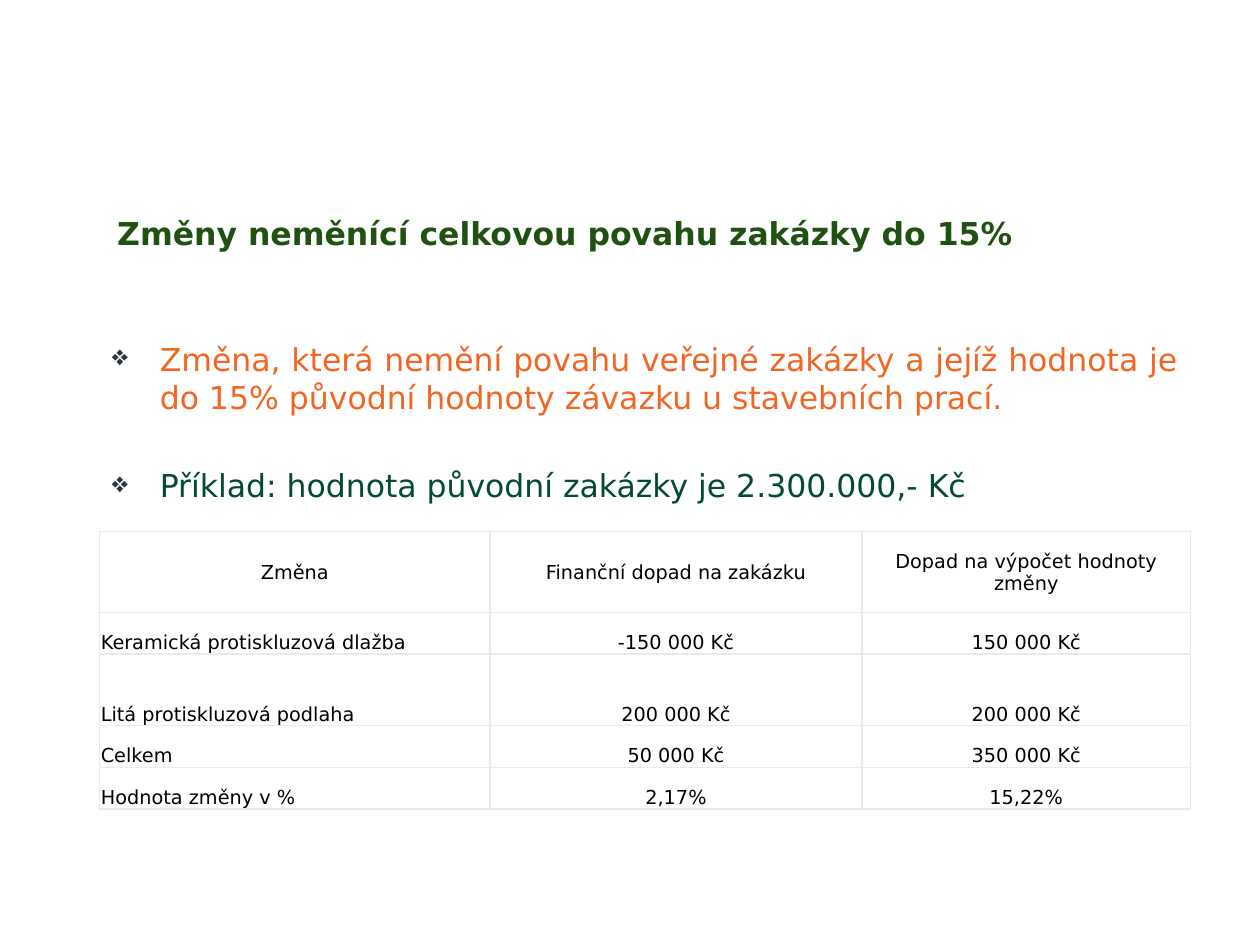
from lxml import etree
from pptx import Presentation
from pptx.dml.color import RGBColor
from pptx.enum.text import MSO_ANCHOR as Anchor, MSO_AUTO_SIZE as AutoSize, PP_ALIGN as Align
from pptx.oxml.ns import qn
from pptx.util import Inches, Pt

TITLE_GREEN = RGBColor(0x21, 0x51, 0x12)
TEXT_GREEN = RGBColor(0x03, 0x4A, 0x31)
ORANGE = RGBColor(0xF3, 0x65, 0x23)
BULLET_GRAY = RGBColor(0x2A, 0x37, 0x3E)
BORDER_GRAY = RGBColor(0xEA, 0xEA, 0xEA)
BLACK = RGBColor(0, 0, 0)
WHITE = RGBColor(0xFF, 0xFF, 0xFF)

LEFT = 0.79
COLUMN_WIDTHS = [3.1, 2.95, 2.61]
WIDTH = sum(COLUMN_WIDTHS)
ROW_HEIGHTS = [0.64, 0.33, 0.57, 0.33, 0.33]

BULLETS = [
    ("Změna, která nemění povahu veřejné zakázky a jejíž hodnota je "
     "do 15% původní hodnoty závazku u stavebních prací.", ORANGE),
    ("Příklad: hodnota původní zakázky je 2.300.000,- Kč", TEXT_GREEN),
]
CHANGES = [
    ["Změna", "Finanční dopad na zakázku", "Dopad na výpočet hodnoty změny"],
    ["Keramická protiskluzová dlažba", "-150 000 Kč", "150 000 Kč"],
    ["Litá protiskluzová podlaha", "200 000 Kč", "200 000 Kč"],
    ["Celkem", "50 000 Kč", "350 000 Kč"],
    ["Hodnota změny v %", "2,17%", "15,22%"],
]


class SlideBuilder:
    font_name = "DejaVu Sans"
    text_size = 18
    table_size = 11

    def __init__(self, slide):
        self.slide = slide

    def add_run(self, paragraph, text, size, color, bold=False):
        run = paragraph.add_run()
        run.text = text
        run.font.name = self.font_name
        run.font.size = Pt(size)
        run.font.bold = bold
        run.font.color.rgb = color

    def set_margins(self, target, left, top, right, bottom):
        target.margin_left, target.margin_top = Inches(left), Inches(top)
        target.margin_right, target.margin_bottom = Inches(right), Inches(bottom)

    def title(self, text, left, top, width, height):
        shape = self.slide.shapes.title
        shape.left, shape.top = Inches(left), Inches(top)
        shape.width, shape.height = Inches(width), Inches(height)
        frame = shape.text_frame
        frame.word_wrap = False
        frame.auto_size = AutoSize.SHAPE_TO_FIT_TEXT
        frame.vertical_anchor = Anchor.BOTTOM
        self.set_margins(frame, 0.14, 0.09, 0.14, 0.09)
        paragraph = frame.paragraphs[0]
        paragraph.alignment = Align.LEFT
        self.add_run(paragraph, text, self.text_size, TITLE_GREEN, bold=True)

    def add_bullet(self, paragraph):
        properties = paragraph._p.get_or_add_pPr()
        properties.set("marL", str(Inches(0.38)))
        properties.set("indent", str(Inches(-0.38)))
        color = etree.SubElement(properties, qn("a:buClr"))
        etree.SubElement(color, qn("a:srgbClr"), val=str(BULLET_GRAY))
        etree.SubElement(properties, qn("a:buSzPct"), val="90000")
        etree.SubElement(properties, qn("a:buChar"), char="❖")

    def bullet_list(self, items, left, top, width, height):
        shape = self.slide.shapes.add_textbox(
            Inches(left), Inches(top), Inches(width), Inches(height))
        frame = shape.text_frame
        frame.word_wrap = True
        self.set_margins(frame, 0.1, 0.42, 0.1, 0.05)
        for index, (text, color) in enumerate(items):
            paragraph = frame.add_paragraph() if index else frame.paragraphs[0]
            self.add_bullet(paragraph)
            paragraph.alignment = Align.JUSTIFY
            if index:
                paragraph.space_before = Pt(29)
            self.add_run(paragraph, text, self.text_size, color)

    def add_borders(self, cell):
        properties = cell._tc.get_or_add_tcPr()
        for position, side in enumerate(("lnL", "lnR", "lnT", "lnB")):
            line = etree.Element(qn(f"a:{side}"), w=str(Pt(1)))
            fill = etree.SubElement(line, qn("a:solidFill"))
            etree.SubElement(fill, qn("a:srgbClr"), val=str(BORDER_GRAY))
            properties.insert(position, line)

    def table(self, rows, left, top):
        table = self.slide.shapes.add_table(
            len(rows), len(COLUMN_WIDTHS), Inches(left), Inches(top),
            Inches(WIDTH), Inches(sum(ROW_HEIGHTS))).table
        for column, width in zip(table.columns, COLUMN_WIDTHS):
            column.width = Inches(width)
        for row, height in zip(table.rows, ROW_HEIGHTS):
            row.height = Inches(height)
        for row_index, texts in enumerate(rows):
            for column_index, text in enumerate(texts):
                is_header = row_index == 0
                is_label = column_index == 0 and not is_header
                cell = table.cell(row_index, column_index)
                cell.fill.solid()
                cell.fill.fore_color.rgb = WHITE
                cell.vertical_anchor = Anchor.MIDDLE if is_header else Anchor.BOTTOM
                self.set_margins(cell, 0.01, 0.01, 0.01, 0)
                self.add_borders(cell)
                paragraph = cell.text_frame.paragraphs[0]
                paragraph.alignment = Align.LEFT if is_label else Align.CENTER
                self.add_run(paragraph, text, self.table_size, BLACK)


def main():
    presentation = Presentation()
    presentation.slide_width, presentation.slide_height = Inches(10), Inches(7.5)
    slide = presentation.slides.add_slide(presentation.slide_layouts[5])
    builder = SlideBuilder(slide)

    # Heading
    builder.title("Změny neměnící celkovou povahu zakázky do 15%", LEFT, 1.6, 7.52, 0.49)
    # Rule and example
    builder.bullet_list(BULLETS, LEFT, 2.28, WIDTH, 4.33)
    # Calculation of the change
    builder.table(CHANGES, LEFT, 4.22)

    presentation.save("out.pptx")


if __name__ == "__main__":
    main()
